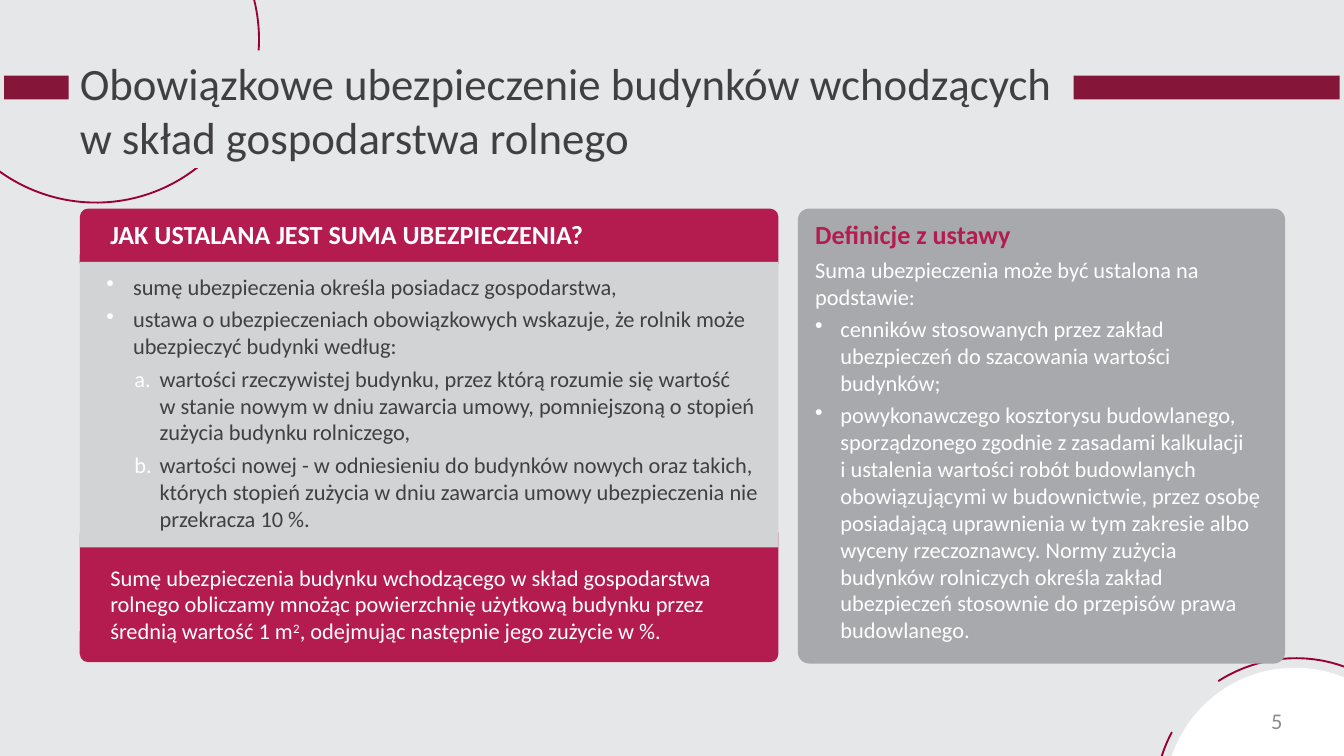
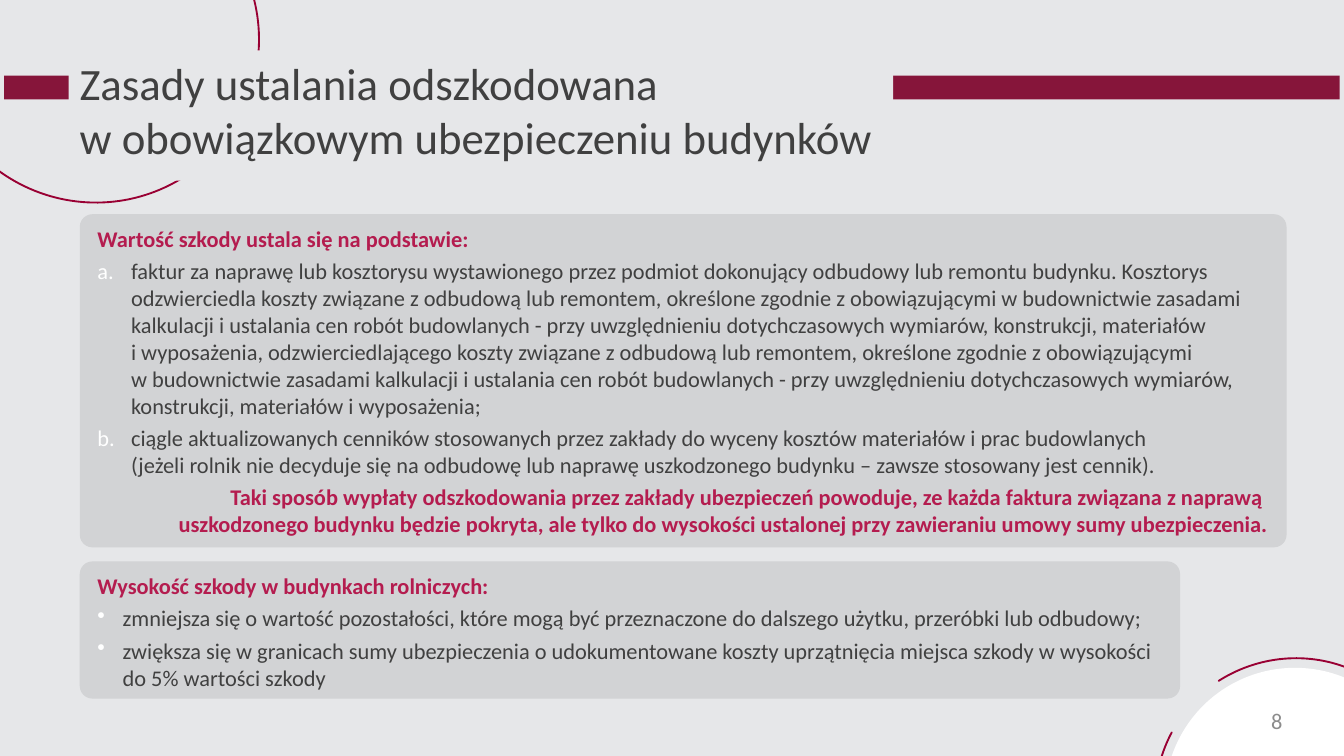
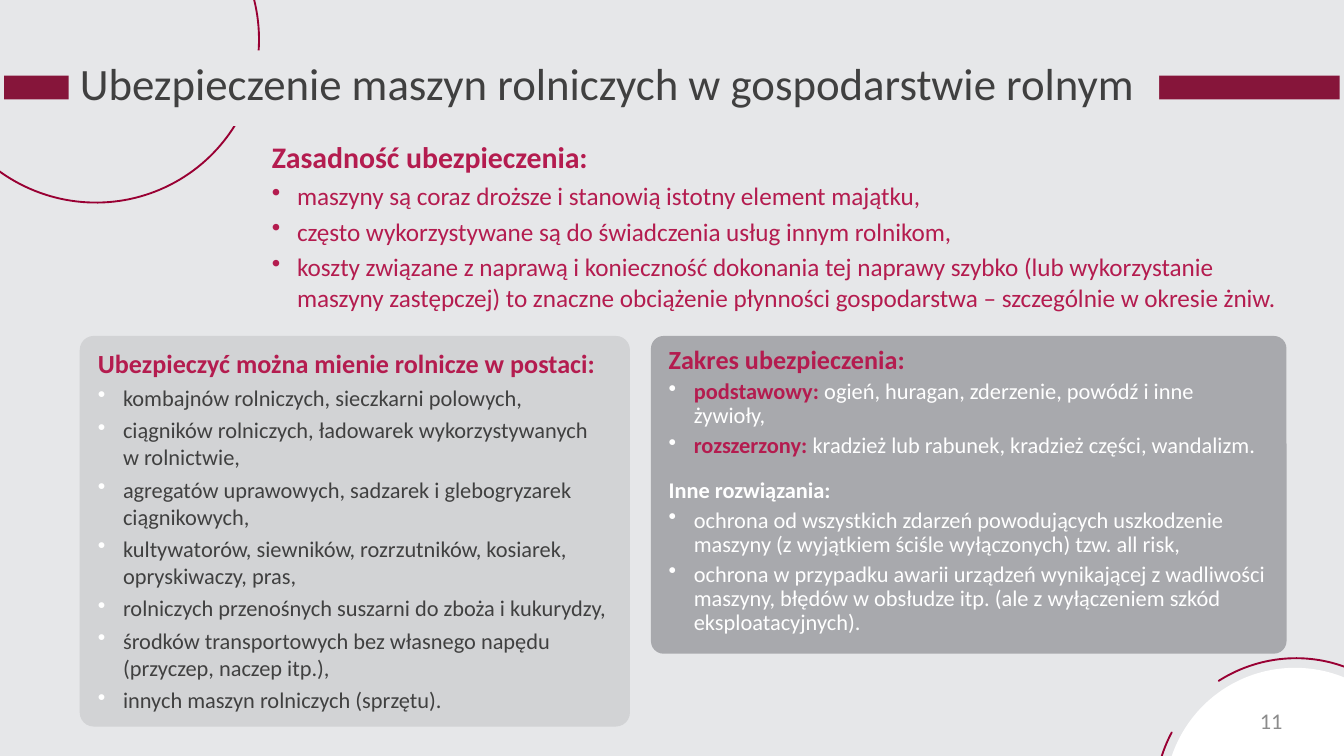
"""Build three slides on compulsory farm insurance."""
from copy import deepcopy

from lxml import etree
from pptx import Presentation
from pptx import util as u
from pptx.dml.color import RGBColor
from pptx.enum import shapes, text
from pptx.oxml.ns import qn

PX = 9525
FONT = "Calibri"
PAPER = RGBColor(0xE6, 0xE7, 0xE9)
MAROON = RGBColor(0x86, 0x15, 0x3A)
ARC_LINE = RGBColor(0x99, 0x00, 0x33)
CRIMSON = RGBColor(0xB4, 0x1C, 0x4F)
LIGHT = RGBColor(0xD2, 0xD3, 0xD5)
GREY = RGBColor(0xA8, 0xA9, 0xAD)
DARK = RGBColor(0x40, 0x40, 0x40)
NUMBER = RGBColor(0x8C, 0x8C, 0x8C)
WHITE = RGBColor(0xFF, 0xFF, 0xFF)

KIND = shapes.MSO_SHAPE
RIGHT = text.PP_ALIGN.RIGHT
TOP, MIDDLE, BOTTOM = (text.MSO_ANCHOR.TOP, text.MSO_ANCHOR.MIDDLE,
                       text.MSO_ANCHOR.BOTTOM)
INSETS = (10, 5, 10, 5)
BULLET = ("buChar", "char", "•")
LETTER = ("buAutoNum", "type", "alphaLcPeriod")

STYLES = {
    "title": dict(size=24, color=DARK, before=0),
    "number": dict(size=12, color=NUMBER, before=0, align=RIGHT),
    "banner": dict(size=14, bold=True, margin=10),
    "summary": dict(margin=10),
    "topic": dict(size=16, bold=True, color=CRIMSON),
    "heading": dict(size=14, bold=True, color=CRIMSON),
    "lead": dict(bold=True, color=CRIMSON),
    "closing": dict(bold=True, color=CRIMSON, align=RIGHT),
    "plain": dict(),
    "subhead": dict(bold=True, before=11),
    "bullet": dict(margin=18, hang=18, mark=BULLET),
    "reason": dict(size=13.5, margin=18, hang=18, mark=BULLET, mark_color=CRIMSON),
    "step": dict(margin=28, hang=19, mark=BULLET),
    "substep": dict(margin=47, hang=18, mark=LETTER),
    "letter": dict(margin=24, hang=24, mark=LETTER),
}


def add_box(slide, kind, box, fill=None, adjustments=(), rotation=0, line=None):
    shape = slide.shapes.add_shape(kind, *(round(v * PX) for v in box))
    shape.shadow.inherit = False
    shape.rotation = rotation
    for index, value in enumerate(adjustments):
        shape.adjustments[index] = value
    if fill is None:
        shape.fill.background()
    else:
        shape.fill.solid()
        shape.fill.fore_color.rgb = fill
    if line is None:
        shape.line.fill.background()
    else:
        shape.line.color.rgb = line
        shape.line.width = u.Pt(1)
    return shape


def write(shape, paragraphs, ink=DARK, insets=INSETS, anchor=TOP, spacing=None):
    frame = shape.text_frame
    frame.word_wrap = True
    frame.vertical_anchor = anchor
    for side, inset in zip(("left", "top", "right", "bottom"), insets):
        setattr(frame, f"margin_{side}", inset * PX)
    for index, (style, *runs) in enumerate(paragraphs):
        look = STYLES[style]
        para = frame.add_paragraph() if index else frame.paragraphs[0]
        para.alignment = look.get("align", text.PP_ALIGN.LEFT)
        para.space_before = u.Pt(look.get("before", 3))
        para.line_spacing = spacing
        props = para._p.get_or_add_pPr()
        props.set("marL", str(look.get("margin", 0) * PX))
        props.set("indent", str(-look.get("hang", 0) * PX))
        if "mark" in look:
            tag, attribute, value = look["mark"]
            tint = etree.SubElement(props, qn("a:buClr"))
            etree.SubElement(tint, qn("a:srgbClr"),
                             val=str(look.get("mark_color", WHITE)))
            etree.SubElement(props, qn(f"a:{tag}")).set(attribute, value)
        for words in runs:
            words, change = (words, {}) if isinstance(words, str) else words
            font_look = {"size": 12, "bold": False, "color": ink} | look | change
            for number, row in enumerate(words.split("\n")):
                if number:
                    para.add_line_break()
                run = para.add_run()
                run.text = row
                font = run.font
                for name, value in dict(name=FONT, size=u.Pt(font_look["size"]),
                                        bold=font_look["bold"]).items():
                    setattr(font, name, value)
                font.color.rgb = font_look["color"]
                if "baseline" in change:
                    run._r.get_or_add_rPr().set("baseline", change["baseline"])
        for line_break in para._p.findall(qn("a:br")):
            line_break.append(deepcopy(para.runs[0]._r.rPr))


STRONG = dict(bold=True, color=CRIMSON)

ARCS = [
    ((-49, -89, 234, 235), 12.3, 170.46),
    ((-49, -90, 234, 235), 132.3, 155.79),
    ((825, 472, 203, 198), 205.2, 170.46),
    ((822, 471, 203, 198), 325.2, 163.48),
]

SLIDES = [
    dict(
        number="5",
        title="Obowiązkowe ubezpieczenie budynków wchodzących \n"
              "w skład gospodarstwa rolnego",
        title_size=(718, 84),
        panels=[
            ((570, 149, 348, 325), 8, GREY, dict(ink=WHITE), [
                ("heading", "Definicje z ustawy"),
                ("plain", "Suma ubezpieczenia może być ustalona na podstawie:"),
                ("bullet", "cenników stosowanych przez zakład ubezpieczeń do "
                           "szacowania wartości budynków;"),
                ("bullet", "powykonawczego kosztorysu budowlanego, sporządzonego "
                           "zgodnie z zasadami kalkulacji \ni ustalenia wartości "
                           "robót budowlanych obowiązującymi w budownictwie, przez "
                           "osobę posiadającą uprawnienia w tym zakresie albo wyceny "
                           "rzeczoznawcy. Normy zużycia budynków rolniczych określa "
                           "zakład ubezpieczeń stosownie do przepisów prawa "
                           "budowlanego."),
            ]),
            ((57, 149, 499, 45), 6, CRIMSON, dict(ink=WHITE), [
                ("banner", "JAK USTALANA JEST SUMA UBEZPIECZENIA?"),
            ]),
            ((57, 375, 499, 98), 6, CRIMSON,
             dict(ink=WHITE, anchor=BOTTOM, insets=(10, 5, 10, 11)), [
                ("summary", "Sumę ubezpieczenia budynku wchodzącego w skład "
                            "gospodarstwa rolnego obliczamy mnożąc powierzchnię "
                            "użytkową budynku przez średnią wartość 1 m",
                 ("2", dict(baseline="30000")),
                 ", odejmując następnie jego zużycie w %."),
            ]),
            ((57, 187, 499, 204), 0, LIGHT, dict(insets=(10, 8, 10, 5)), [
                ("step", "sumę ubezpieczenia określa posiadacz gospodarstwa,"),
                ("step", "ustawa o ubezpieczeniach obowiązkowych wskazuje, że "
                         "rolnik może ubezpieczyć budynki według:"),
                ("substep", "wartości rzeczywistej budynku, przez którą rozumie się "
                            "wartość \nw stanie nowym w dniu zawarcia umowy, "
                            "pomniejszoną o stopień zużycia budynku rolniczego,"),
                ("substep", "wartości nowej - w odniesieniu do budynków nowych oraz "
                            "takich, których stopień zużycia w dniu zawarcia umowy "
                            "ubezpieczenia nie przekracza 10 %."),
            ]),
        ],
    ),
    dict(
        number="8",
        title="Zasady ustalania odszkodowana \n"
              "w obowiązkowym ubezpieczeniu budynków",
        title_size=(589, 93),
        panels=[
            ((57, 153, 862, 238), 9, LIGHT, {}, [
                ("lead", "Wartość szkody ustala się na podstawie:"),
                ("letter", "faktur za naprawę lub kosztorysu wystawionego przez "
                           "podmiot dokonujący odbudowy lub remontu budynku. "
                           "Kosztorys odzwierciedla koszty związane z odbudową lub "
                           "remontem, określone zgodnie z obowiązującymi w "
                           "budownictwie zasadami kalkulacji i ustalania cen robót "
                           "budowlanych - przy uwzględnieniu dotychczasowych "
                           "wymiarów, konstrukcji, materiałów \ni wyposażenia, "
                           "odzwierciedlającego koszty związane z odbudową lub "
                           "remontem, określone zgodnie z obowiązującymi \nw "
                           "budownictwie zasadami kalkulacji i ustalania cen robót "
                           "budowlanych - przy uwzględnieniu dotychczasowych "
                           "wymiarów, konstrukcji, materiałów i wyposażenia;"),
                ("letter", "ciągle aktualizowanych cenników stosowanych przez "
                           "zakłady do wyceny kosztów materiałów i prac budowlanych "
                           "\n(jeżeli rolnik nie decyduje się na odbudowę lub naprawę "
                           "uszkodzonego budynku – zawsze stosowany jest cennik)."),
                ("closing", "Taki sposób wypłaty odszkodowania przez zakłady "
                            "ubezpieczeń powoduje, ze każda faktura związana z "
                            "naprawą \nuszkodzonego budynku będzie pokryta, ale tylko "
                            "do wysokości ustalonej przy zawieraniu umowy sumy "
                            "ubezpieczenia."),
            ]),
            ((57, 401, 786, 98), 9, LIGHT, {}, [
                ("lead", "Wysokość szkody w budynkach rolniczych:"),
                ("bullet", "zmniejsza się o wartość pozostałości, które mogą być "
                           "przeznaczone do dalszego użytku, przeróbki lub "
                           "odbudowy;"),
                ("bullet", "zwiększa się w granicach sumy ubezpieczenia o "
                           "udokumentowane koszty uprzątnięcia miejsca szkody w "
                           "wysokości do 5% wartości szkody"),
            ]),
        ],
    ),
    dict(
        number="11",
        title="Ubezpieczenie maszyn rolniczych w gospodarstwie rolnym",
        title_size=(779, 54),
        panels=[
            ((465, 240, 454, 227), 9, GREY, dict(ink=WHITE, spacing=0.9), [
                ("heading", "Zakres ubezpieczenia:"),
                ("bullet", ("podstawowy: ", STRONG),
                 "ogień, huragan, zderzenie, powódź i inne żywioły,"),
                ("bullet", ("rozszerzony: ", STRONG),
                 "kradzież lub rabunek, kradzież części, wandalizm."),
                ("subhead", "Inne rozwiązania:"),
                ("bullet", "ochrona od wszystkich zdarzeń powodujących uszkodzenie "
                           "maszyny (z wyjątkiem ściśle wyłączonych) tzw. all risk,"),
                ("bullet", "ochrona w przypadku awarii urządzeń wynikającej z "
                           "wadliwości maszyny, błędów w obsłudze itp. (ale z "
                           "wyłączeniem szkód eksploatacyjnych)."),
            ]),
            ((57, 240, 393, 279), 10, LIGHT, {}, [
                ("heading", "Ubezpieczyć można mienie rolnicze w postaci:"),
                ("bullet", "kombajnów rolniczych, sieczkarni polowych,"),
                ("bullet", "ciągników rolniczych, ładowarek wykorzystywanych \n"
                           "w rolnictwie,"),
                ("bullet", "agregatów uprawowych, sadzarek i glebogryzarek "
                           "ciągnikowych,"),
                ("bullet", "kultywatorów, siewników, rozrzutników, kosiarek, "
                           "opryskiwaczy, pras,"),
                ("bullet", "rolniczych przenośnych suszarni do zboża i kukurydzy,"),
                ("bullet", "środków transportowych bez własnego napędu (przyczep, "
                           "naczep itp.),"),
                ("bullet", "innych maszyn rolniczych (sprzętu)."),
            ]),
            ((178, 88, 771, 136), 21, None, dict(ink=CRIMSON), [
                ("topic", "Zasadność ubezpieczenia:"),
                ("reason", "maszyny są coraz droższe i stanowią istotny element "
                           "majątku,"),
                ("reason", "często wykorzystywane są do świadczenia usług innym "
                           "rolnikom,"),
                ("reason", "koszty związane z naprawą i konieczność dokonania tej "
                           "naprawy szybko (lub wykorzystanie maszyny zastępczej) to "
                           "znaczne obciążenie płynności gospodarstwa – szczególnie "
                           "w okresie żniw."),
            ]),
        ],
    ),
]

deck = Presentation()
deck.slide_width, deck.slide_height = 960 * PX, 540 * PX

for content in SLIDES:
    slide = deck.slides.add_slide(deck.slide_layouts[6])
    slide.background.fill.solid()
    slide.background.fill.fore_color.rgb = PAPER

    for box, rotation, start in ARCS:
        add_box(slide, KIND.BLOCK_ARC, box, MAROON, (start, 1.76, 0), rotation,
                ARC_LINE)
    add_box(slide, KIND.RECTANGLE, (3, 54, 954, 17), MAROON)
    add_box(slide, KIND.OVAL, (832, 477, 186, 186), WHITE)

    title = add_box(slide, KIND.RECTANGLE, (49, 36, *content["title_size"]), PAPER)
    write(title, [("title", content["title"])], insets=(8, 4, 8, 12))

    for box, radius, fill, options, paragraphs in content["panels"]:
        panel = add_box(slide, KIND.ROUNDED_RECTANGLE, box, fill,
                        (radius / min(box[2:]),))
        write(panel, paragraphs, **options)

    page = slide.shapes.add_textbox(*(v * PX for v in (794, 500, 132, 29)))
    write(page, [("number", content["number"])], anchor=MIDDLE)

deck.save("out.pptx")
